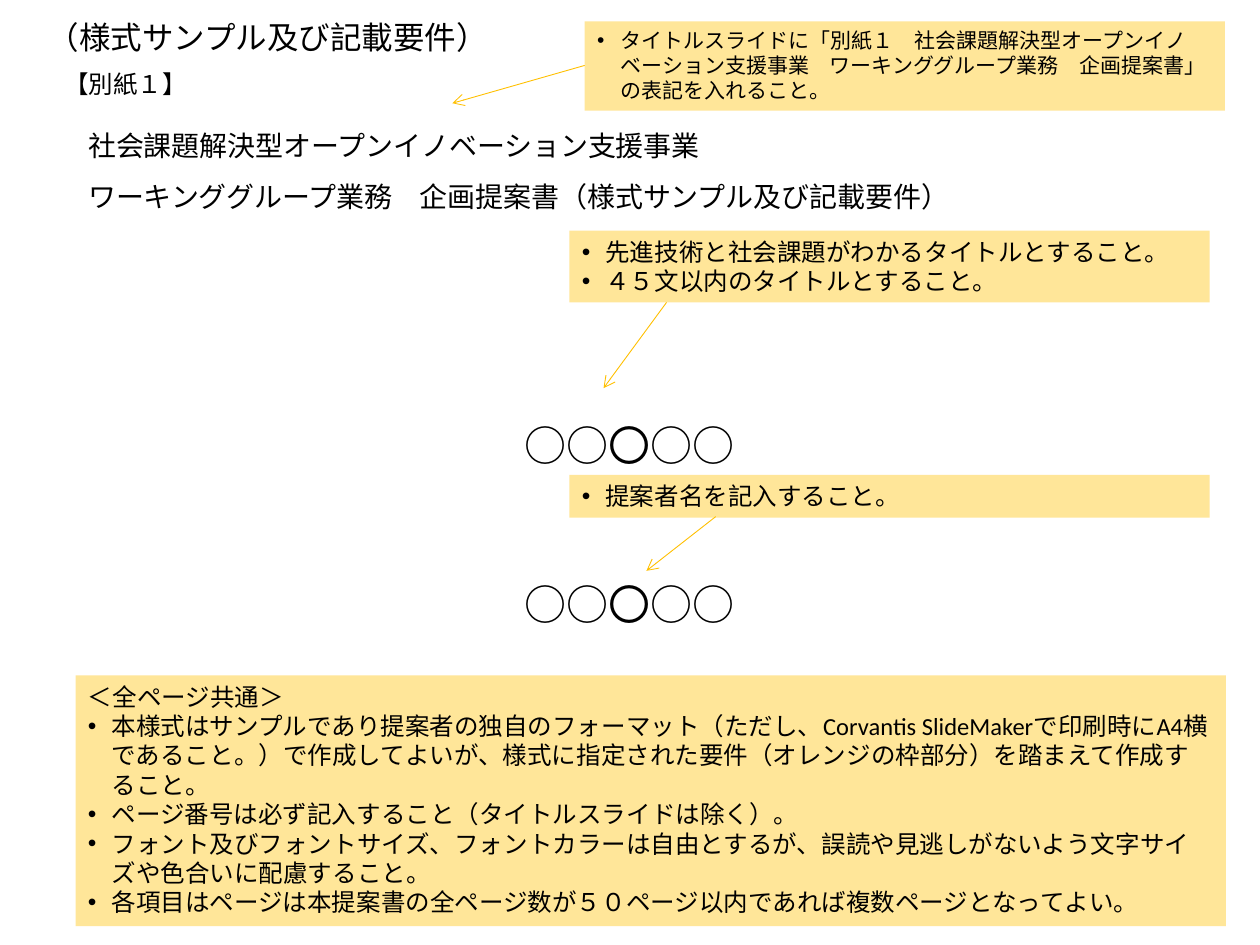
from lxml.etree import SubElement
from pptx import Presentation
from pptx.dml.color import RGBColor
from pptx.enum.shapes import MSO_CONNECTOR, MSO_SHAPE
from pptx.enum.text import MSO_ANCHOR, MSO_AUTO_SIZE, PP_ALIGN
from pptx.oxml.ns import qn
from pptx.util import Pt

BLACK = RGBColor(0x00, 0x00, 0x00)
NOTE_FILL = RGBColor(0xFF, 0xE6, 0x99)
ARROW_COLOR = RGBColor(0xFF, 0xC0, 0x00)
BULLET_INDENT = Pt(13.5)
PROJECT = "社会課題解決型オープンイノベーション支援事業"
DOCUMENT = "ワーキンググループ業務　企画提案書"


def set_attributes(target, values):
    for name, value in values.items():
        setattr(target, name, value)


def place(shape, box):
    set_attributes(shape, dict(zip(("left", "top", "width", "height"), map(Pt, box))))


def format_frame(frame, wrap=True, auto_size=MSO_AUTO_SIZE.NONE):
    set_attributes(frame, {"word_wrap": wrap, "auto_size": auto_size,
                           "vertical_anchor": MSO_ANCHOR.TOP})


def format_paragraph(paragraph, size, font, alignment=PP_ALIGN.LEFT, spacing=None):
    set_attributes(paragraph, {"alignment": alignment, "line_spacing": spacing})
    for run in paragraph.runs:
        set_attributes(run.font, {"size": Pt(size), "name": font})
        run.font.color.rgb = BLACK


def add_bullet(paragraph):
    properties = paragraph._p.get_or_add_pPr()
    properties.set("marL", str(BULLET_INDENT))
    properties.set("indent", str(-BULLET_INDENT))
    SubElement(properties, qn("a:buFont")).set("typeface", "Arial")
    SubElement(properties, qn("a:buChar")).set("char", "•")


def fill_title(slide, box):
    title = slide.shapes.title
    place(title, box)
    format_frame(title.text_frame)
    title.text_frame.text = f"{PROJECT}\v{DOCUMENT}（様式サンプル及び記載要件）"
    format_paragraph(title.text_frame.paragraphs[0], 16, "Arial", spacing=1.5)


def add_label(slide, box, text, size, font):
    label = slide.shapes.add_textbox(*map(Pt, box))
    format_frame(label.text_frame, False, MSO_AUTO_SIZE.SHAPE_TO_FIT_TEXT)
    label.text_frame.text = text
    format_paragraph(label.text_frame.paragraphs[0], size, font)


def add_entry_field(slide, box):
    field = slide.shapes.add_textbox(*map(Pt, box))
    format_frame(field.text_frame)
    field.text_frame.text = "○○〇○○"
    format_paragraph(field.text_frame.paragraphs[0], 24, "Arial", PP_ALIGN.CENTER, 1.5)


def add_note(slide, box, items, size=14, heading=None):
    """Each item is a list of (text, font) runs."""
    note = slide.shapes.add_shape(MSO_SHAPE.RECTANGLE, *map(Pt, box))
    note.shadow.inherit = False
    note.fill.solid()
    note.fill.fore_color.rgb = NOTE_FILL
    note.line.fill.background()
    frame = note.text_frame
    format_frame(frame, auto_size=MSO_AUTO_SIZE.SHAPE_TO_FIT_TEXT)
    entries = ([[(heading, "Calibri")]] if heading else []) + items
    for index, runs in enumerate(entries):
        paragraph = frame.add_paragraph() if index else frame.paragraphs[0]
        for text, _ in runs:
            paragraph.add_run().text = text
        format_paragraph(paragraph, size, "Calibri")
        for run, (_, font) in zip(paragraph.runs, runs):
            run.font.name = font
        if index or not heading:
            add_bullet(paragraph)


def add_arrow(slide, start, end):
    arrow = slide.shapes.add_connector(MSO_CONNECTOR.STRAIGHT, *map(Pt, start + end))
    arrow.line.color.rgb = ARROW_COLOR
    arrow.line.width = Pt(0.5)
    SubElement(arrow.line._get_or_add_ln(), qn("a:tailEnd")).set("type", "arrow")
    SubElement(arrow._element.spPr, qn("a:effectLst"))


def plain(*texts):
    return [[(text, "Calibri")] for text in texts]


def main():
    presentation = Presentation()
    set_attributes(presentation, {"slide_width": Pt(720), "slide_height": Pt(540)})
    slide = presentation.slides.add_slide(presentation.slide_layouts[5])

    # Headings
    fill_title(slide, (43.2, 60.5, 582.5, 70.6))
    add_label(slide, (29.5, 36, 85, 24.5), "【別紙１】", 14, "Calibri")
    add_label(slide, (20.2, 6.5, 269.3, 28.8), "（様式サンプル及び記載要件）", 18, "Arial")

    # Fields for the proposal title and the proposer
    add_entry_field(slide, (68.4, 221.8, 582.5, 70.6))
    add_entry_field(slide, (68.4, 312.5, 582.5, 61.2))

    # Requirements for all pages
    add_note(slide, (43.2, 385.9, 657.4, 143.3), plain(
        "本様式はサンプルであり提案者の独自のフォーマット（ただし、Corvantis SlideMaker"
        "で印刷時にA4横であること。）で作成してよいが、様式に指定された要件"
        "（オレンジの枠部分）を踏まえて作成すること。",
        "ページ番号は必ず記入すること（タイトルスライドは除く）。",
        "フォント及びフォントサイズ、フォントカラーは自由とするが、"
        "誤読や見逃しがないよう文字サイズや色合いに配慮すること。",
        "各項目はページは本提案書の全ページ数が５０ページ以内であれば複数ページとなってよい。",
    ), heading="＜全ページ共通＞")

    # Notes on single fields, with their arrows
    add_note(slide, (334.1, 12.2, 365.8, 51.1), [[
        ("タイトルスライドに「別紙１　", "Calibri"),
        (f"{PROJECT}　{DOCUMENT}", "Arial"),
        ("」の表記を入れること。", "Calibri"),
    ]], size=12)
    add_note(slide, (325.4, 131.8, 365.8, 41), plain(
        "先進技術と社会課題がわかるタイトルとすること。",
        "４５文以内のタイトルとすること。"))
    add_note(slide, (325.4, 271.4, 365.8, 24.5), plain("提案者名を記入すること。"))
    for start, end in (((334.1, 37.4), (258.5, 59)),
                       ((380.9, 172.8), (344.9, 221.8)),
                       ((409, 295.2), (369.4, 326.2))):
        add_arrow(slide, start, end)

    presentation.save("out.pptx")


if __name__ == "__main__":
    main()
